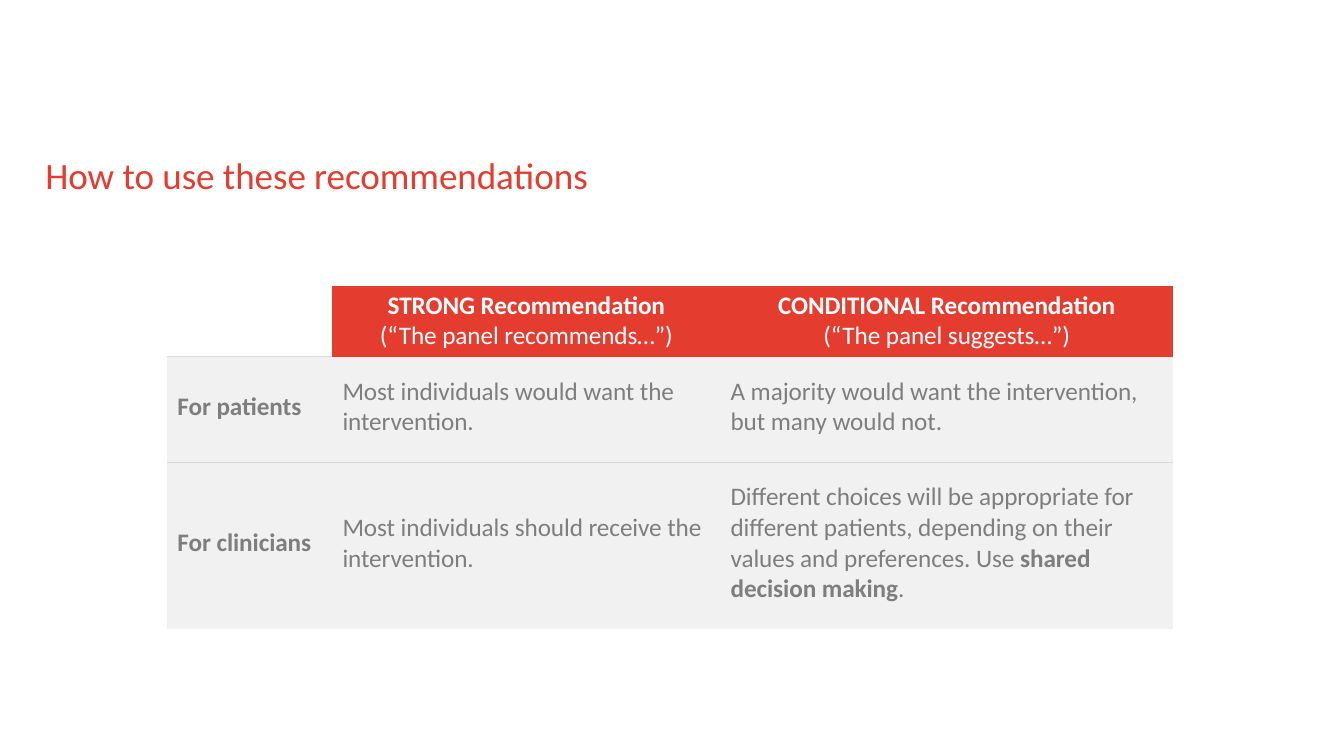
from lxml import etree
from pptx import Presentation
from pptx.dml.color import RGBColor
from pptx.enum.text import MSO_ANCHOR, PP_ALIGN
from pptx.oxml.ns import qn
from pptx.util import Pt

MIDDLE = MSO_ANCHOR.MIDDLE
LEFT, CENTER = PP_ALIGN.LEFT, PP_ALIGN.CENTER
COLORS = {"red": "E43D30", "white": "FFFFFF", "gray": "7E7E7E", "panel": "F1F1F1", "rule": "D9D9D9"}


class RecommendationSlide:
    """Holds the style and the slide, and draws its title and table."""

    def __init__(self, slide, font="Calibri"):
        self.slide = slide
        self.font = font

    def color(self, key):
        return RGBColor.from_string(COLORS[key])

    def add_text(self, frame, paragraphs, size, color, align=LEFT):
        for index, runs in enumerate(paragraphs):
            paragraph = frame.add_paragraph() if index else frame.paragraphs[0]
            paragraph.alignment = align
            for text, bold in runs:
                run = paragraph.add_run()
                run.text = text
                run.font.name = self.font
                run.font.size = Pt(size)
                run.font.bold = bold
                run.font.color.rgb = self.color(color)
                run.font._element.set("spc", "-5")

    def title(self, text, left, top, width, height):
        frame = self.slide.shapes.add_textbox(Pt(left), Pt(top), Pt(width), Pt(height)).text_frame
        frame.word_wrap = True
        frame.vertical_anchor = MIDDLE
        frame.margin_left = frame.margin_right = frame.margin_top = frame.margin_bottom = 0
        self.add_text(frame, [[(text, False)]], 26.5, "red")

    def borders(self, cell, ruled):
        properties = cell._tc.get_or_add_tcPr()
        for side in "LRTB":
            line = etree.SubElement(properties, qn(f"a:ln{side}"), w=str(Pt(1)))
            if side in ruled:
                fill = etree.SubElement(line, qn("a:solidFill"))
                etree.SubElement(fill, qn("a:srgbClr"), val=COLORS["rule"])
            else:
                etree.SubElement(line, qn("a:noFill"))

    def cell(self, cell, paragraphs, fill, color, align, margins, ruled):
        self.borders(cell, ruled)
        if fill:
            cell.fill.solid()
            cell.fill.fore_color.rgb = self.color(fill)
        else:
            cell.fill.background()
        cell.vertical_anchor = MIDDLE
        cell.margin_left, cell.margin_right, cell.margin_top, cell.margin_bottom = map(Pt, margins)
        self.add_text(cell.text_frame, paragraphs, 18, color, align)

    def table(self, rows, left, top, widths, heights):
        table = self.slide.shapes.add_table(
            len(heights), len(widths), Pt(left), Pt(top), Pt(sum(widths)), Pt(sum(heights))).table
        table.first_row = table.horz_banding = False
        for column, width in zip(table.columns, widths):
            column.width = Pt(width)
        for row, height in zip(table.rows, heights):
            row.height = Pt(height)
        indents = (7.2, 7.2, 9.4)
        rules = ("", "TB", "T")
        for r, row in enumerate(rows):
            for c, paragraphs in enumerate(row):
                if r == 0:
                    fill = "red" if c else None
                    ruled = "" if c else "B"
                    self.cell(table.cell(r, c), paragraphs, fill, "white", CENTER, (2, 0, 0, 1), ruled)
                else:
                    ruled = "B" if r == 1 and c else rules[r]
                    margins = (indents[c], 10 if c == 2 else 0, 0, 4)
                    self.cell(table.cell(r, c), paragraphs, "panel", "gray", LEFT, margins, ruled)


def main():
    deck = Presentation()
    deck.slide_width, deck.slide_height = Pt(960), Pt(540)
    page = RecommendationSlide(deck.slides.add_slide(deck.slide_layouts[6]))
    page.title("How to use these recommendations", 32.4, 108, 420, 34)
    recommendations = [
        [
            [],
            [[("STRONG Recommendation", True)], [("(“The panel recommends…”)", False)]],
            [[("CONDITIONAL Recommendation", True)], [("(“The panel suggests…”)", False)]],
        ],
        [
            [[("For patients", True)]],
            [[("Most individuals would want the intervention.", False)]],
            [[("A majority would want the intervention, but many would not.", False)]],
        ],
        [
            [[("For clinicians", True)]],
            [[("Most individuals should receive the intervention.", False)]],
            [[("Different choices will be appropriate for different patients, depending on their "
               "values and preferences. Use ", False), ("shared decision making", True), (".", False)]],
        ],
    ]
    page.table(recommendations, 119.5, 204.5, (118, 275, 325.5), (50.4, 75.6, 118.8))
    deck.save("out.pptx")


if __name__ == "__main__":
    main()
